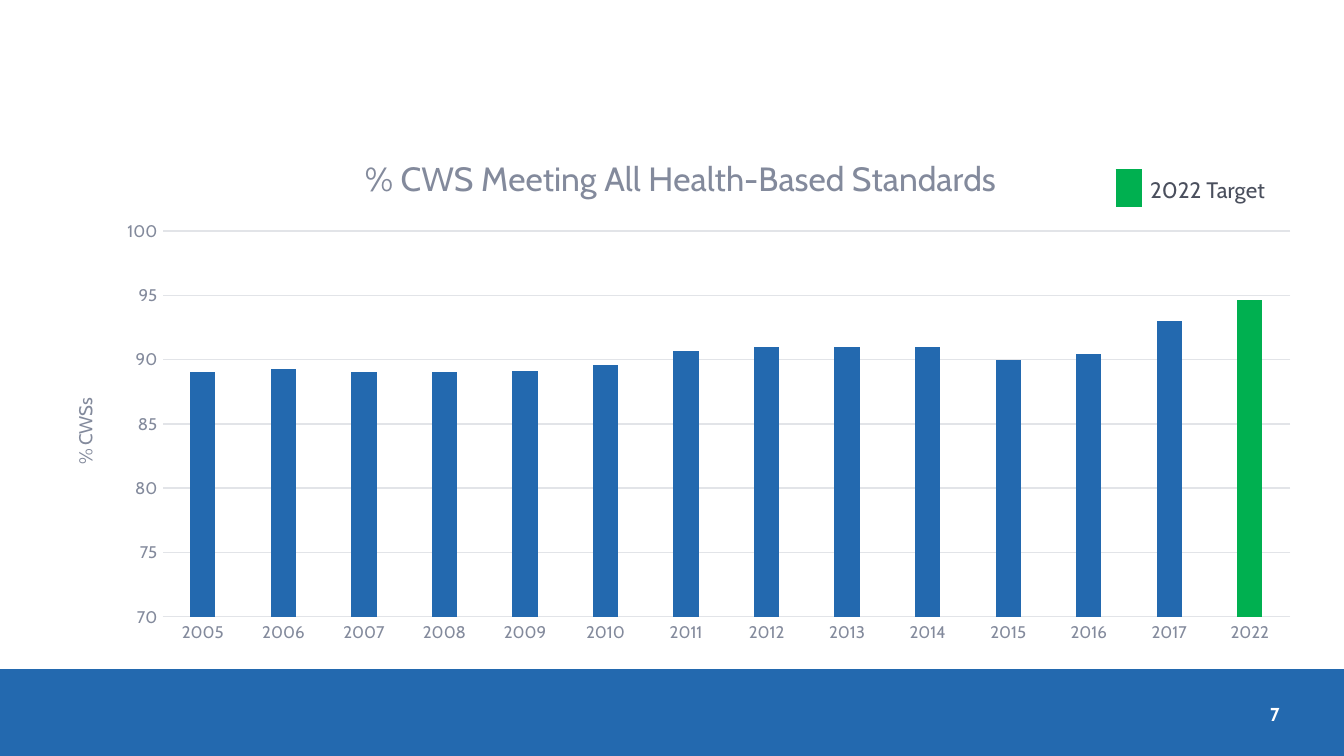
"""Build a slide with a column chart of water systems meeting health-based standards."""
from lxml.etree import SubElement
from pptx import Presentation
from pptx.chart.data import CategoryChartData
from pptx.dml.color import RGBColor
from pptx.enum.chart import XL_CHART_TYPE, XL_TICK_MARK
from pptx.enum.shapes import MSO_CONNECTOR, MSO_SHAPE
from pptx.enum.text import MSO_ANCHOR, PP_ALIGN
from pptx.oxml.ns import qn
from pptx.util import Inches, Pt

COLORS = {"blue": "2369AF", "green": "00B050", "grid": "E2E4E8",
          "muted": "838A9C", "dark": "4A4F5D", "white": "FFFFFF"}
CHART_WIDTH, CHART_HEIGHT = 9.46, 3.88
PERCENT_BY_YEAR = {
    "2005": 89, "2006": 89.3, "2007": 89, "2008": 89, "2009": 89.1,
    "2010": 89.6, "2011": 90.7, "2012": 91, "2013": 91, "2014": 91,
    "2015": 90, "2016": 90.4, "2017": 93, "2022": 94.6,
}


def style_font(font, size, color, bold=False):
    font.name = "Cabin"
    font.size = Pt(size)
    font.bold = bold
    font.color.rgb = RGBColor.from_string(COLORS[color])


def set_layout(element, position, **inches):
    layout = element.find(qn("c:layout"))
    if layout is None:
        layout = element.makeelement(qn("c:layout"))
        element.insert(position, layout)
    manual = SubElement(layout, qn("c:manualLayout"))
    if "w" in inches:
        SubElement(manual, qn("c:layoutTarget")).set("val", "inner")
    for axis in ("x", "y"):
        SubElement(manual, qn(f"c:{axis}Mode")).set("val", "edge")
    for name, length in inches.items():
        total = CHART_WIDTH if name in ("x", "w") else CHART_HEIGHT
        SubElement(manual, qn(f"c:{name}")).set("val", str(length / total))


presentation = Presentation()
presentation.slide_width = Inches(10)
presentation.slide_height = Inches(10) * 9 // 16
slide = presentation.slides.add_slide(presentation.slide_layouts[6])

footer_top = Inches(4.98)
footer = slide.shapes.add_shape(
    MSO_SHAPE.RECTANGLE, 0, footer_top, presentation.slide_width,
    presentation.slide_height - footer_top)
footer.shadow.inherit = False
footer.fill.solid()
footer.fill.fore_color.rgb = RGBColor.from_string(COLORS["blue"])
footer.line.fill.background()

chart_data = CategoryChartData()
chart_data.categories = list(PERCENT_BY_YEAR)
chart_data.add_series("Series 1", list(PERCENT_BY_YEAR.values()))
chart = slide.shapes.add_chart(
    XL_CHART_TYPE.COLUMN_CLUSTERED, Inches(0.33), Inches(0.98),
    Inches(CHART_WIDTH), Inches(CHART_HEIGHT), chart_data).chart
chart.has_legend = False
style_font(chart.font, 10, "dark")

plot = chart.plots[0]
plot.gap_width = 219
plot.overlap = -27
plot.vary_by_categories = False
series = plot.series[0]
target = series.points[len(PERCENT_BY_YEAR) - 1]
for item, color in ((series, "blue"), (target, "green")):
    item.format.fill.solid()
    item.format.fill.fore_color.rgb = RGBColor.from_string(COLORS[color])

category_axis, value_axis = chart.category_axis, chart.value_axis
for axis in (category_axis, value_axis):
    axis.major_tick_mark = XL_TICK_MARK.NONE
    axis.minor_tick_mark = XL_TICK_MARK.NONE
    style_font(axis.tick_labels.font, 9, "muted")
value_axis.minimum_scale = 70
value_axis.maximum_scale = 100
value_axis.major_unit = 5
value_axis.has_major_gridlines = True
value_axis.format.line.fill.background()
for line in (category_axis.format.line, value_axis.major_gridlines.format.line):
    line.color.rgb = RGBColor.from_string(COLORS["grid"])
    line.width = Pt(0.75)

for title, text, size, left, top in (
        (chart.chart_title, "% CWS Meeting All Health-Based Standards", 18, 2.34, 0.13),
        (value_axis.axis_title, "% CWSs", 10, 0.18, 1.96)):
    title.text_frame.text = text
    style_font(title.text_frame.paragraphs[0].runs[0].font, size, "muted")
    set_layout(title._element, 1, x=left, y=top)
plot_area = chart._chartSpace.find(qn("c:chart")).find(qn("c:plotArea"))
set_layout(plot_area, 0, x=0.88, y=0.74, w=8.39, h=2.87)

legend_key = slide.shapes.add_connector(
    MSO_CONNECTOR.STRAIGHT, Inches(8.3), Inches(1.4), Inches(8.5), Inches(1.4))
legend_key.line.color.rgb = RGBColor.from_string(COLORS["green"])
legend_key.line.width = Pt(20)
SubElement(legend_key._element.spPr, qn("a:effectLst"))

for text, left, top, width, size, color, bold, alignment, anchor in (
        ("2022 Target", 8.46, 1.26, 1.12, 12, "dark", False, PP_ALIGN.LEFT, MSO_ANCHOR.TOP),
        ("7", 8.95, 5.16, 0.67, 10, "white", True, PP_ALIGN.RIGHT, MSO_ANCHOR.MIDDLE)):
    text_box = slide.shapes.add_textbox(
        Inches(left), Inches(top), Inches(width), Inches(0.3))
    text_frame = text_box.text_frame
    text_frame.word_wrap = True
    text_frame.vertical_anchor = anchor
    text_frame.text = text
    paragraph = text_frame.paragraphs[0]
    paragraph.alignment = alignment
    style_font(paragraph.runs[0].font, size, color, bold)

presentation.save("out.pptx")
